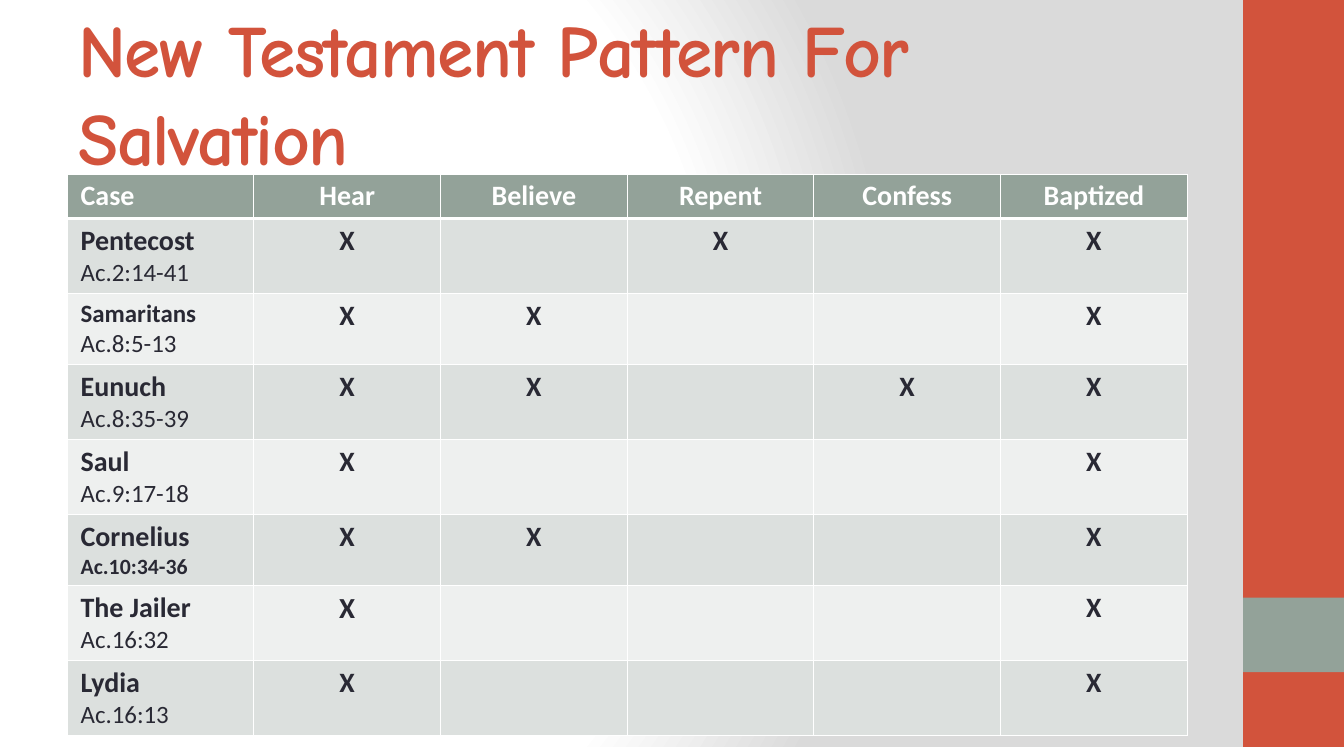
import lxml.etree
import pptx
import pptx.dml.color
import pptx.enum.shapes
import pptx.enum.text
import pptx.oxml
import pptx.oxml.ns
import pptx.util

RED = pptx.dml.color.RGBColor(0xD2, 0x53, 0x3C)
SAGE = pptx.dml.color.RGBColor(0x93, 0xA2, 0x99)
INK = pptx.dml.color.RGBColor(0x29, 0x29, 0x34)
WHITE = pptx.dml.color.RGBColor(0xFF, 0xFF, 0xFF)
SILVER = pptx.dml.color.RGBColor(0xDA, 0xDA, 0xDA)
BAND_DARK = pptx.dml.color.RGBColor(0xDC, 0xE0, 0xDE)
BAND_LIGHT = pptx.dml.color.RGBColor(0xEE, 0xF0, 0xEF)

EMU_PER_PX = 9144
STEPS = ["Case", "Hear", "Believe", "Repent", "Confess", "Baptized"]
CASES = [
    ("Pentecost", "Ac.2:14-41", {"Hear", "Repent", "Baptized"}, 99),
    ("Samaritans", "Ac.8:5-13", {"Hear", "Believe", "Baptized"}, 95),
    ("Eunuch", "Ac.8:35-39", {"Hear", "Believe", "Confess", "Baptized"}, 99),
    ("Saul", "Ac.9:17-18", {"Hear", "Baptized"}, 99),
    ("Cornelius", "Ac.10:34-36", {"Hear", "Believe", "Baptized"}, 93),
    ("The Jailer", "Ac.16:32", {"Hear", "Baptized"}, 99),
    ("Lydia", "Ac.16:13", {"Hear", "Baptized"}, 99),
]
HEADER_HEIGHT = 58
NAME_SIZES = {"Samaritans": 24}
REFERENCE_STYLES = {"Cornelius": (21, True)}
MARK_SIZES = {("The Jailer", "Hear"): 28}


def px(length):
    """Turn a length in px into EMU."""
    return pptx.util.Emu(length * EMU_PER_PX)


def style_font(font, name, size, color, bold):
    """Set the face, size, colour and weight of a font."""
    font.name = name
    font.size = pptx.util.Pt(size)
    font.color.rgb = color
    font.bold = bold


def paint_background(slide):
    """Give the slide its radial white to silver background."""
    slide.background.fill.solid()
    solid = slide.element.xpath("./p:cSld/p:bg/p:bgPr/a:solidFill")[0]
    stops = "".join(
        f'<a:gs pos="{position}"><a:srgbClr val="{color}"/></a:gs>'
        for position, color in [(0, WHITE), (75000, WHITE), (100000, SILVER)]
    )
    gradient = pptx.oxml.parse_xml(
        f'<a:gradFill {pptx.oxml.ns.nsdecls("a")} rotWithShape="1">'
        f"<a:gsLst>{stops}</a:gsLst>"
        '<a:path path="circle">'
        '<a:fillToRect l="20000" t="50000" r="100000" b="50000"/>'
        "</a:path></a:gradFill>"
    )
    solid.getparent().replace(solid, gradient)


def add_side_band(slide, left, top, width, height):
    """Draw the red band on the right with its sage block."""
    blocks = [(top, height, RED), (top + height * 8 // 10, height // 10, SAGE)]
    for block_top, block_height, color in blocks:
        block = slide.shapes.add_shape(
            pptx.enum.shapes.MSO_SHAPE.RECTANGLE,
            px(left), px(block_top), px(width), px(block_height),
        )
        block.shadow.inherit = False
        block.fill.solid()
        block.fill.fore_color.rgb = color
        block.line.fill.background()


def place_title(slide, left, top, width, height):
    """Fill and format the title placeholder."""
    title = slide.shapes.title
    title.left, title.top = px(left), px(top)
    title.width, title.height = px(width), px(height)
    frame = title.text_frame
    frame.text = "New Testament Pattern For Salvation"
    frame.word_wrap = True
    frame.auto_size = pptx.enum.text.MSO_AUTO_SIZE.NONE
    frame.vertical_anchor = pptx.enum.text.MSO_ANCHOR.MIDDLE
    frame.margin_left = frame.margin_right = px(15)
    frame.margin_top = frame.margin_bottom = px(7)
    heading = frame.paragraphs[0]
    heading.alignment = pptx.enum.text.PP_ALIGN.LEFT
    font = heading.runs[0].font
    style_font(font, "Comic Neue", 71, RED, True)
    heading.runs[0].font._element.set("spc", "-150")


def dress_cell(cell, fill, top_line, bottom_line):
    """Set the margins, fill and white borders of a cell."""
    cell.margin_left = cell.margin_right = px(18)
    cell.margin_top = cell.margin_bottom = px(7)
    cell.fill.solid()
    cell.fill.fore_color.rgb = fill
    properties = cell._tc.get_or_add_tcPr()
    widths = {"lnL": 1, "lnR": 1, "lnT": top_line, "lnB": bottom_line}
    for index, (side, width) in enumerate(widths.items()):
        border = pptx.oxml.parse_xml(
            f'<a:{side} {pptx.oxml.ns.nsdecls("a")} w="{pptx.util.Pt(width)}">'
            f'<a:solidFill><a:srgbClr val="{WHITE}"/></a:solidFill></a:{side}>'
        )
        properties.insert(index, border)


def write_cell(cell, text, styles, color, centred):
    """Write one paragraph per line, each with its size and weight."""
    cell.text_frame.text = text
    for paragraph, (size, bold) in zip(cell.text_frame.paragraphs, styles):
        if centred:
            paragraph.alignment = pptx.enum.text.PP_ALIGN.CENTER
        for run in paragraph.runs:
            style_font(run.font, "Calibri", size, color, bold)


def add_case_table(slide, left, top, width):
    """Draw the table of conversion cases and the steps each one names."""
    heights = [HEADER_HEIGHT] + [case[3] for case in CASES]
    table = slide.shapes.add_table(
        len(heights), len(STEPS), px(left), px(top), px(width), px(sum(heights))
    ).table
    for column in table.columns:
        column.width = px(width // len(STEPS))
    for row, height in zip(table.rows, heights):
        row.height = px(height)

    for column, step in enumerate(STEPS):
        header = table.cell(0, column)
        dress_cell(header, SAGE, 1, 3)
        write_cell(header, step, [(27, True)], WHITE, column > 0)

    for row, (name, reference, marks, _) in enumerate(CASES, start=1):
        band = BAND_DARK if row % 2 else BAND_LIGHT
        for column, step in enumerate(STEPS):
            cell = table.cell(row, column)
            dress_cell(cell, band, 3 if row == 1 else 1, 1)
            if column == 0:
                styles = [
                    (NAME_SIZES.get(name, 27), True),
                    REFERENCE_STYLES.get(name, (24, False)),
                ]
                write_cell(cell, f"{name}\n{reference}", styles, INK, False)
            elif step in marks:
                size = MARK_SIZES.get((name, step), 27)
                write_cell(cell, "X", [(size, True)], INK, True)


def main():
    """Build the slide and save it."""
    deck = pptx.Presentation()
    deck.slide_width, deck.slide_height = px(1800), px(1000)
    slide = deck.slides.add_slide(deck.slide_layouts[5])
    paint_background(slide)
    add_side_band(slide, 1665, 0, 135, 1000)
    place_title(slide, 90, 40, 1500, 167)
    add_case_table(slide, 90, 233, 1500)
    deck.save("out.pptx")


if __name__ == "__main__":
    main()
